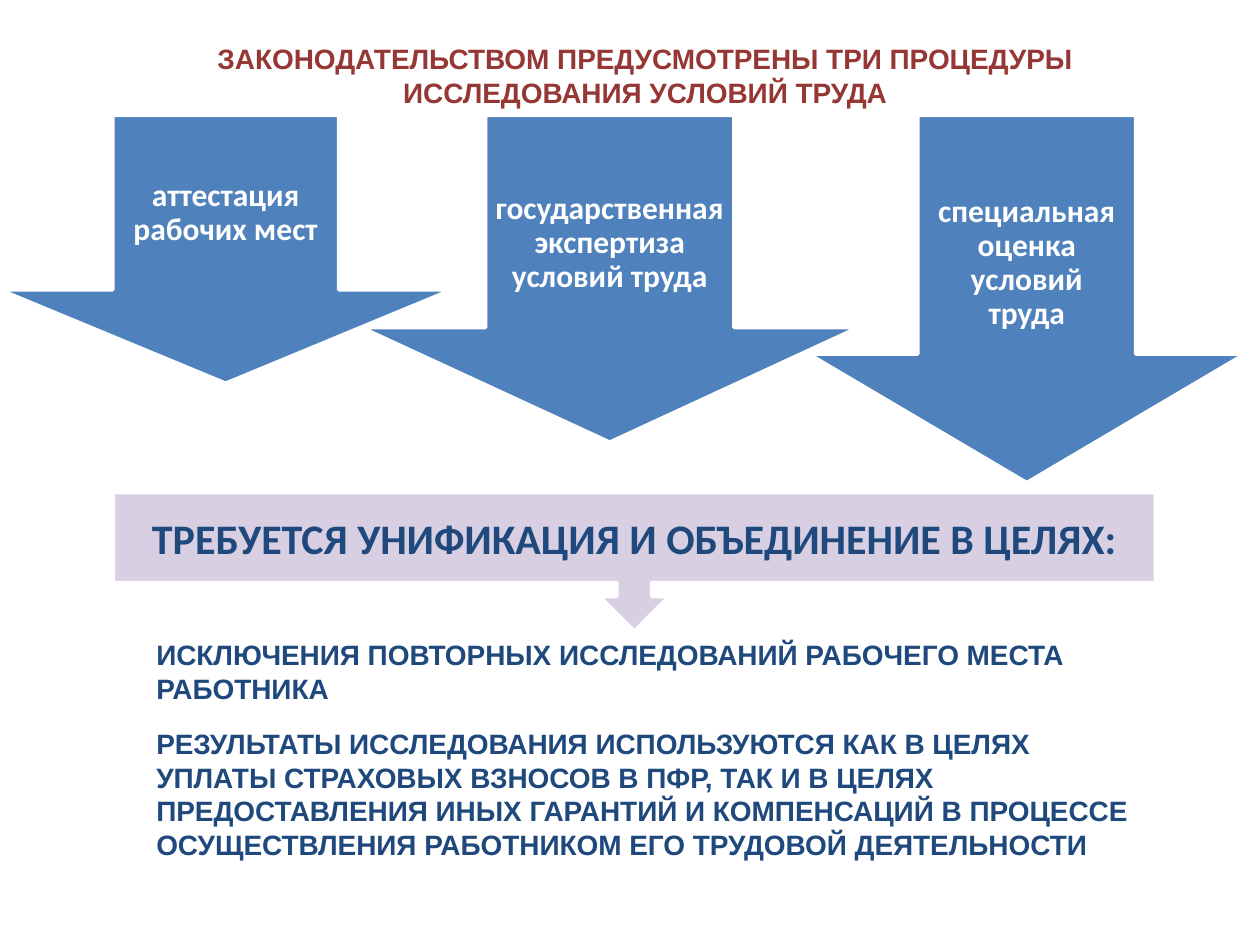
from dataclasses import dataclass

from lxml.etree import SubElement
from pptx import Presentation
from pptx.dml.color import RGBColor
from pptx.enum.shapes import MSO_SHAPE
from pptx.enum.text import MSO_ANCHOR, MSO_AUTO_SIZE, PP_ALIGN
from pptx.oxml.ns import qn
from pptx.shapes.autoshape import Shape
from pptx.slide import Slide
from pptx.text.text import TextFrame
from pptx.util import Pt


@dataclass(frozen=True)
class Theme:
    heading: RGBColor = RGBColor(0x95, 0x37, 0x35)
    ink: RGBColor = RGBColor(0x1F, 0x49, 0x7D)
    arrow: RGBColor = RGBColor(0x4F, 0x81, 0xBD)
    callout: RGBColor = RGBColor(0xB3, 0xA2, 0xC7)
    white: RGBColor = RGBColor(0xFF, 0xFF, 0xFF)
    plain_font: str = "Arial"
    shape_font: str = "Calibri"
    plain_size: float = 16
    arrow_size: float = 18
    callout_size: float = 24
    outline: float = 2


@dataclass(frozen=True)
class Procedure:
    """An arrow: its left edge, width, and the heights of shoulder and tip."""
    lines: tuple[str, ...]
    left: float
    width: float
    shoulder: float
    tip: float


THEME = Theme()
ARROW_TOP = 66
TEXT_TOP_INSET = 6
TEXT_TIP_INSET = 47

PROCEDURES = (
    Procedure(("аттестация рабочих мест",), 0, 258, 165.6, 219),
    Procedure(("государственная", "экспертиза", "условий труда"), 206.6, 283.7, 187.2, 252.7),
    Procedure(("специальная оценка условий\vтруда",), 462.2, 249.1, 202.3, 275.8),
)
GOALS = (
    "ИСКЛЮЧЕНИЯ ПОВТОРНЫХ ИССЛЕДОВАНИЙ РАБОЧЕГО МЕСТА РАБОТНИКА",
    "РЕЗУЛЬТАТЫ ИССЛЕДОВАНИЯ ИСПОЛЬЗУЮТСЯ КАК В ЦЕЛЯХ УПЛАТЫ СТРАХОВЫХ ВЗНОСОВ В ПФР, "
    "ТАК И В ЦЕЛЯХ ПРЕДОСТАВЛЕНИЯ ИНЫХ ГАРАНТИЙ И КОМПЕНСАЦИЙ В ПРОЦЕССЕ "
    "ОСУЩЕСТВЛЕНИЯ РАБОТНИКОМ ЕГО ТРУДОВОЙ ДЕЯТЕЛЬНОСТИ",
)


def write(frame: TextFrame, lines: tuple[str, ...], font: str, size: float, color: RGBColor,
          align: PP_ALIGN = PP_ALIGN.CENTER, line_spacing: float = 1, gap: float = 0) -> None:
    frame.word_wrap = True
    frame.auto_size = MSO_AUTO_SIZE.NONE
    for index, line in enumerate(lines):
        para = frame.add_paragraph() if index else frame.paragraphs[0]
        para.text = line
        para.alignment = align
        para.line_spacing = line_spacing
        para.space_before = Pt(gap if index else 0)
        para.font.name = font
        para.font.size = Pt(size)
        para.font.bold = True
        para.font.color.rgb = color


def place(shape: Shape, left: float, top: float, width: float, height: float) -> None:
    shape.left, shape.top, shape.width, shape.height = map(Pt, (left, top, width, height))


def add_filled(page: Slide, kind: MSO_SHAPE, left: float, top: float, width: float,
               height: float, color: RGBColor) -> Shape:
    shape = page.shapes.add_shape(kind, Pt(left), Pt(top), Pt(width), Pt(height))
    shape.shadow.inherit = False
    shape.fill.solid()
    shape.fill.fore_color.rgb = color
    shape.line.color.rgb = THEME.white
    shape.line.width = Pt(THEME.outline)
    shape.text_frame.vertical_anchor = MSO_ANCHOR.MIDDLE
    return shape


def add_procedure(page: Slide, item: Procedure) -> None:
    height = item.tip - ARROW_TOP
    head = item.tip - item.shoulder
    arrow = add_filled(page, MSO_SHAPE.DOWN_ARROW, item.left, ARROW_TOP, item.width, height,
                       THEME.arrow)
    arrow.adjustments[0] = 0.5
    arrow.adjustments[1] = head / min(item.width, height)
    frame = arrow.text_frame
    frame.margin_left = frame.margin_right = Pt(1.5)
    frame.margin_top = Pt(TEXT_TOP_INSET)
    # The text area of a down arrow ends halfway down its head.
    frame.margin_bottom = Pt(TEXT_TIP_INSET - head / 2)
    write(frame, item.lines, THEME.shape_font, THEME.arrow_size, THEME.white, line_spacing=0.9)


def add_callout(page: Slide) -> None:
    callout = add_filled(page, MSO_SHAPE.DOWN_ARROW_CALLOUT, 64.8, 281.5, 595.4, 79.2,
                         THEME.callout)
    fill_color = callout.fill._xPr.find(qn("a:solidFill"))[0]
    SubElement(fill_color, qn("a:alpha")).set("val", "50000")
    write(callout.text_frame, ("ТРЕБУЕТСЯ УНИФИКАЦИЯ И ОБЪЕДИНЕНИЕ В ЦЕЛЯХ:",),
          THEME.shape_font, THEME.callout_size, THEME.ink)


def fill_title(page: Slide) -> None:
    title = page.shapes.title
    place(title, 59.8, 20.2, 617.8, 46)
    title.text_frame.vertical_anchor = MSO_ANCHOR.TOP
    write(title.text_frame,
          ("ЗАКОНОДАТЕЛЬСТВОМ ПРЕДУСМОТРЕНЫ ТРИ ПРОЦЕДУРЫ ИССЛЕДОВАНИЯ УСЛОВИЙ ТРУДА",),
          THEME.plain_font, THEME.plain_size, THEME.heading)


def fill_goals(page: Slide) -> None:
    body = page.placeholders[1]
    place(body, 82.1, 360.7, 584, 136)
    write(body.text_frame, GOALS, THEME.plain_font, THEME.plain_size, THEME.ink,
          PP_ALIGN.LEFT, gap=12.5)
    for para in body.text_frame.paragraphs:
        properties = para._p.get_or_add_pPr()
        properties.set("marL", "0")
        properties.set("indent", "0")
        SubElement(properties, qn("a:buNone"))
        # Bullet settings must come before the default run properties.
        properties.append(properties.find(qn("a:defRPr")))


def main() -> None:
    deck = Presentation()
    deck.slide_width, deck.slide_height = Pt(720), Pt(540)
    page = deck.slides.add_slide(deck.slide_layouts[1])
    fill_title(page)
    add_callout(page)
    for procedure in PROCEDURES:
        add_procedure(page, procedure)
    fill_goals(page)
    deck.save("out.pptx")


if __name__ == "__main__":
    main()
